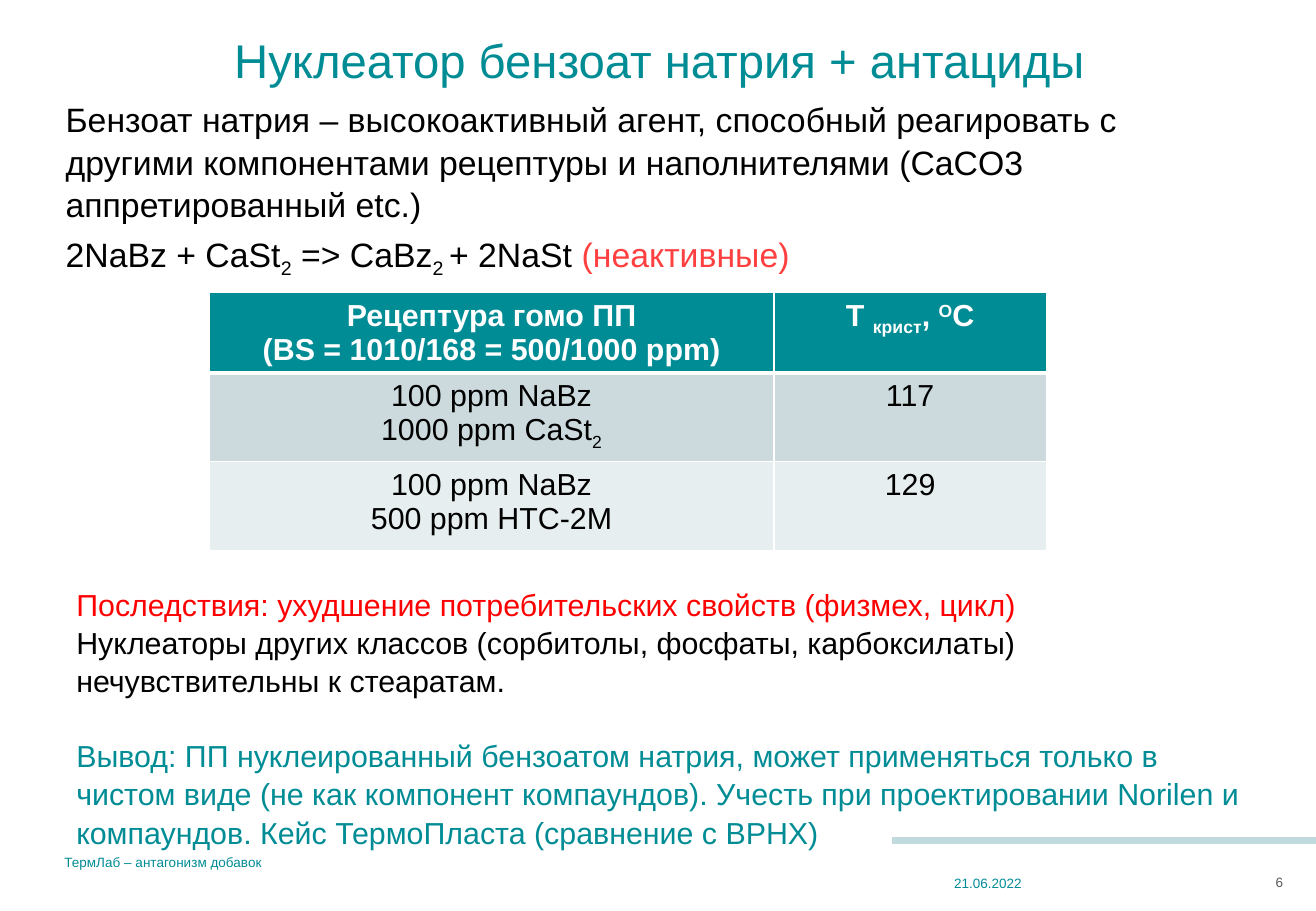
from lxml import etree
from pptx import Presentation
from pptx import util as u
from pptx.dml.color import RGBColor
from pptx.enum import shapes, text
from pptx.oxml.ns import qn

COLORS = {
    "teal": "008C95", "black": "000000", "white": "FFFFFF", "gray": "595959",
    "red": "FF0000", "coral": "FF4040", "rule": "C0DADE",
    "band_dark": "CCDADD", "band_light": "E7EEEF",
}
SUB, SUPER = -25, 30
LEFT, CENTER, RIGHT = text.PP_ALIGN.LEFT, text.PP_ALIGN.CENTER, text.PP_ALIGN.RIGHT
TOP, BOTTOM = text.MSO_ANCHOR.TOP, text.MSO_ANCHOR.BOTTOM


def rgb(name):
    return RGBColor.from_string(COLORS[name])


class SlideBuilder:
    font = "Arial"

    def __init__(self, deck):
        self.page = deck.slides.add_slide(deck.slide_layouts[5])

    def place(self, shape, left, top, width, height):
        shape.left, shape.top = u.Inches(left), u.Inches(top)
        shape.width, shape.height = u.Inches(width), u.Inches(height)

    def set_frame(self, frame, margins, anchor):
        frame.word_wrap = True
        frame.auto_size = text.MSO_AUTO_SIZE.NONE
        frame.vertical_anchor = anchor
        (frame.margin_left, frame.margin_top,
         frame.margin_right, frame.margin_bottom) = map(u.Inches, margins)

    def add_paragraphs(self, frame, paragraphs, size, align=LEFT, bold=False,
                       spacing=1.0):
        for index, (color, before, spans) in enumerate(paragraphs):
            para = frame.paragraphs[0] if index == 0 else frame.add_paragraph()
            para.alignment = align
            para.line_spacing = spacing
            para.space_before = u.Pt(before)
            para.font.name, para.font.size = self.font, u.Pt(size)
            para.font.bold = bold
            para.font.color.rgb = rgb(color)
            for words, baseline, span_color in spans:
                span = para.add_run()
                span.text = words
                if baseline:
                    span.font._element.set("baseline", f"{baseline * 1000}")
                if span_color:
                    span.font.color.rgb = rgb(span_color)

    def title(self, words, box):
        shape = self.page.shapes.title
        self.place(shape, *box)
        self.set_frame(shape.text_frame, (0, 0.04, 0, 0), TOP)
        self.add_paragraphs(shape.text_frame, [plain(words, "teal")], 28, CENTER)

    def text(self, paragraphs, box, size, align=LEFT, anchor=TOP,
             margins=(0, 0, 0, 0), spacing=1.0):
        shape = self.page.shapes.add_textbox(*map(u.Inches, box))
        self.set_frame(shape.text_frame, margins, anchor)
        self.add_paragraphs(shape.text_frame, paragraphs, size, align,
                            spacing=spacing)

    def line(self, start, end, color, width):
        line = self.page.shapes.add_connector(
            shapes.MSO_CONNECTOR.STRAIGHT, *map(u.Inches, start + end))
        line.line.color.rgb = rgb(color)
        line.line.width = u.Pt(width)
        etree.SubElement(line._element.spPr, qn("a:effectLst"))

    def border(self, cell, side, width):
        edge = etree.SubElement(cell._tc.get_or_add_tcPr(), qn(f"a:{side}"),
                                w=str(u.Pt(width)))
        fill = etree.SubElement(edge, qn("a:solidFill"))
        etree.SubElement(fill, qn("a:srgbClr"), val=COLORS["white"])

    def table(self, rows, box, widths, heights, fills):
        table = self.page.shapes.add_table(
            len(rows), len(widths), *map(u.Inches, box)).table
        for column, width in zip(table.columns, widths):
            column.width = u.Inches(width)
        for number, (cells, height, fill) in enumerate(zip(rows, heights, fills)):
            table.rows[number].height = u.Inches(height)
            for column, paragraphs in enumerate(cells):
                cell = table.cell(number, column)
                for side in ("lnL", "lnR", "lnT", "lnB"):
                    under_header = (number, side) in ((0, "lnB"), (1, "lnT"))
                    self.border(cell, side, 3 if under_header else 1)
                cell.fill.solid()
                cell.fill.fore_color.rgb = rgb(fill)
                self.add_paragraphs(cell.text_frame, paragraphs, 18, CENTER,
                                    number == 0)


def rich(*spans, color="black", before=0):
    return color, before, [(*span, None, None)[:3] for span in spans]


def plain(words, color="black", before=0):
    return rich((words,), color=color, before=before)


def main():
    deck = Presentation()
    deck.slide_width, deck.slide_height = u.Inches(10.83), u.Inches(7.5)
    slide = SlideBuilder(deck)

    slide.line((7.34, 6.92), (10.83, 6.92), "rule", 3.75)
    slide.title("Нуклеатор бензоат натрия + антациды", (0.31, 0.22, 10.23, 0.77))
    slide.text([
        plain("Бензоат натрия – высокоактивный агент, способный реагировать с "
              "другими компонентами рецептуры и наполнителями (CaCO3 "
              "аппретированный etc.)"),
        rich(("2NaBz + CaSt",), ("2", SUB), (" => CaBz",), ("2 ", SUB),
             ("+ 2NaSt ",), ("(неактивные)", None, "coral"), before=4),
    ], (0.54, 0.8, 9.76, 1.46), 20, margins=(0, 0, 0.1, 0), spacing=1.05)

    slide.table([
        [[plain("Рецептура гомо ПП", "white"),
          plain("(BS = 1010/168 = 500/1000 ppm)", "white")],
         [rich(("T ",), ("крист", SUB), (", ",), ("О", SUPER), ("С",),
               color="white")]],
        [[plain("100 ppm NaBz"), rich(("1000 ppm CaSt",), ("2", SUB))],
         [plain("117")]],
        [[plain("100 ppm NaBz"), plain("500 ppm HTC-2M")], [plain("129")]],
    ], (1.72, 2.41, 6.89, 2.12), (4.65, 2.24), (0.66, 0.73, 0.73),
        ("teal", "band_dark", "band_light"))

    slide.text([
        plain("Последствия: ухудшение потребительских свойств (физмех, цикл)", "red"),
        plain("Нуклеаторы других классов (сорбитолы, фосфаты, карбоксилаты) "
              "нечувствительны к стеаратам."),
        plain("Вывод: ПП нуклеированный бензоатом натрия, может применяться только "
              "в чистом виде (не как компонент компаундов). Учесть при "
              "проектировании Norilen и компаундов. Кейс ТермоПласта "
              "(сравнение с ВРНХ)", "teal", before=21.7),
    ], (0.53, 4.76, 9.9, 2.22), 18, margins=(0.1, 0.05, 0.1, 0.05), spacing=1.05)

    slide.text([plain("ТермЛаб – антагонизм добавок", "teal")],
               (0.53, 6.91, 2.42, 0.25), 8, anchor=BOTTOM)
    slide.text([plain("21.06.2022", "teal")],
               (7.52, 7.08, 0.89, 0.26), 8, RIGHT, BOTTOM)
    slide.text([plain("6", "gray")], (10.04, 6.99, 0.52, 0.34), 8, RIGHT, BOTTOM)
    deck.save("out.pptx")


if __name__ == "__main__":
    main()
